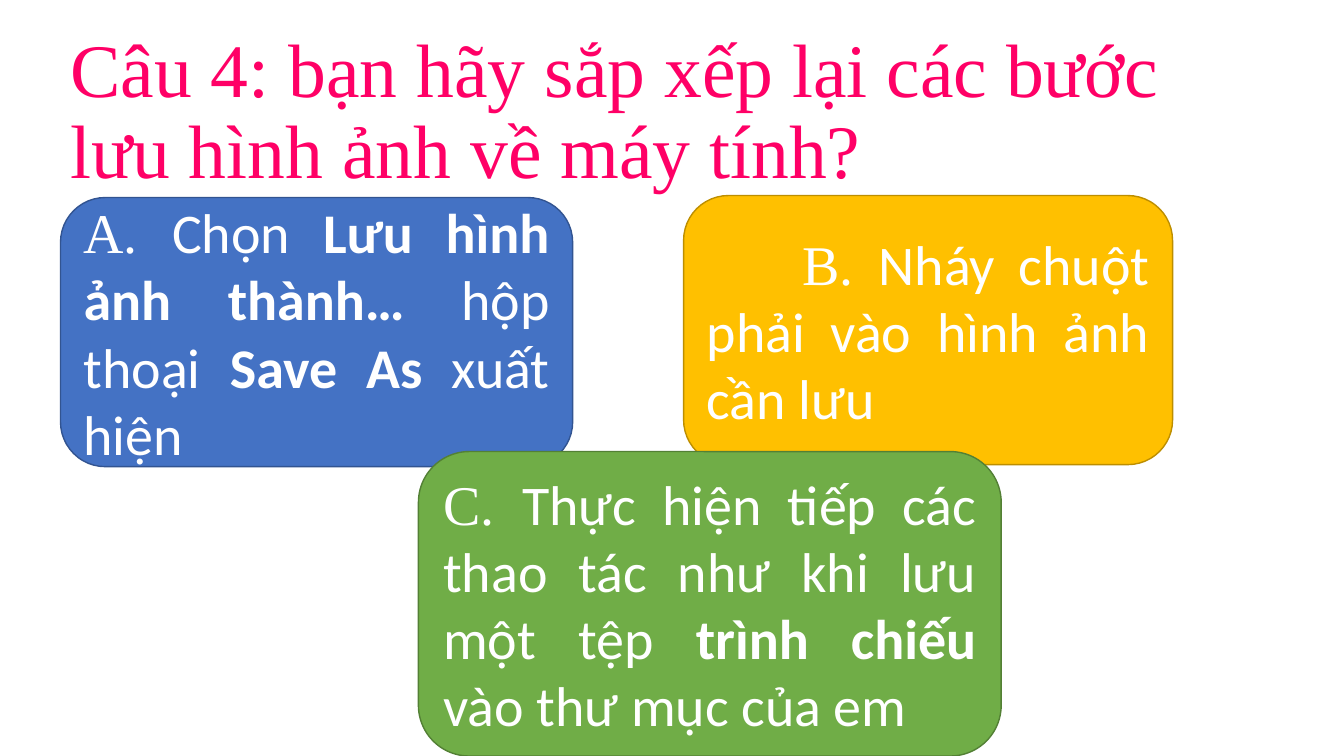
from pptx import Presentation
from pptx import util as u
from pptx.dml.color import RGBColor
from pptx.enum import shapes, text

PINK = RGBColor(0xFF, 0x00, 0x66)
WHITE = RGBColor(0xFF, 0xFF, 0xFF)
BLUE = RGBColor(0x44, 0x72, 0xC4)
NAVY = RGBColor(0x32, 0x54, 0x91)
GOLD = RGBColor(0xFF, 0xC0, 0x00)
OCHRE = RGBColor(0xBD, 0x8E, 0x00)
GREEN = RGBColor(0x70, 0xAD, 0x47)
MOSS = RGBColor(0x53, 0x80, 0x35)


class Deck:
    """Hold the style and the current slide, and draw its elements."""

    PX = 9144
    SERIF = "Times New Roman"
    SANS = "Calibri"

    def __init__(self, wide, high):
        self.prs = Presentation()
        self.prs.slide_width = wide * self.PX
        self.prs.slide_height = high * self.PX
        self.slide = self.prs.slides.add_slide(self.prs.slide_layouts[6])

    def area(self, box):
        return [n * self.PX for n in box]

    def phrase(self, para, words, face, size, color, bold=False):
        run = para.add_run()
        run.text = words
        font = run.font
        font.name, font.size, font.bold = face, u.Pt(size), bold
        font.color.rgb = color

    def frame(self, shape):
        frame = shape.text_frame
        frame.word_wrap = True
        frame.vertical_anchor = text.MSO_ANCHOR.MIDDLE
        return frame.paragraphs[0]

    def title(self, box, words):
        para = self.frame(self.slide.shapes.add_textbox(*self.area(box)))
        para.line_spacing = 0.9
        self.phrase(para, words, self.SERIF, 54, PINK)

    def card(self, box, fill, edge, mark, parts, indent=0):
        shape = self.slide.shapes.add_shape(
            shapes.MSO_SHAPE.ROUNDED_RECTANGLE, *self.area(box))
        shape.shadow.inherit = False
        shape.fill.solid()
        shape.fill.fore_color.rgb = fill
        shape.line.color.rgb = edge
        shape.line.width = u.Pt(1)
        para = self.frame(shape)
        para.alignment = text.PP_ALIGN.JUSTIFY
        if indent:
            props = para._p.get_or_add_pPr()
            props.set("marL", "0")
            props.set("indent", str(indent * self.PX))
        self.phrase(para, mark + ". ", self.SERIF, 40, WHITE)
        for i, words in enumerate(parts):
            self.phrase(para, words, self.SANS, 40, WHITE, i % 2 == 1)


def main():
    deck = Deck(1333, 750)
    deck.card((60, 196, 508, 267), BLUE, NAVY, "A",
              ["Chọn ", "Lưu hình ảnh thành… ", "hộp thoại ", "Save As ",
               "xuất hiện"])
    deck.title((60, 40, 1126, 145),
               "Câu 4: bạn hãy sắp xếp lại các bước lưu hình ảnh về máy tính?")
    deck.card((678, 194, 485, 267), GOLD, OCHRE, "B",
              ["Nháy chuột phải vào hình ảnh cần lưu"], indent=95)
    deck.card((415, 448, 578, 302), GREEN, MOSS, "C",
              ["Thực hiện tiếp các thao tác như khi lưu một tệp ",
               "trình chiếu ", "vào thư mục của em"])
    deck.prs.save("out.pptx")


if __name__ == "__main__":
    main()
